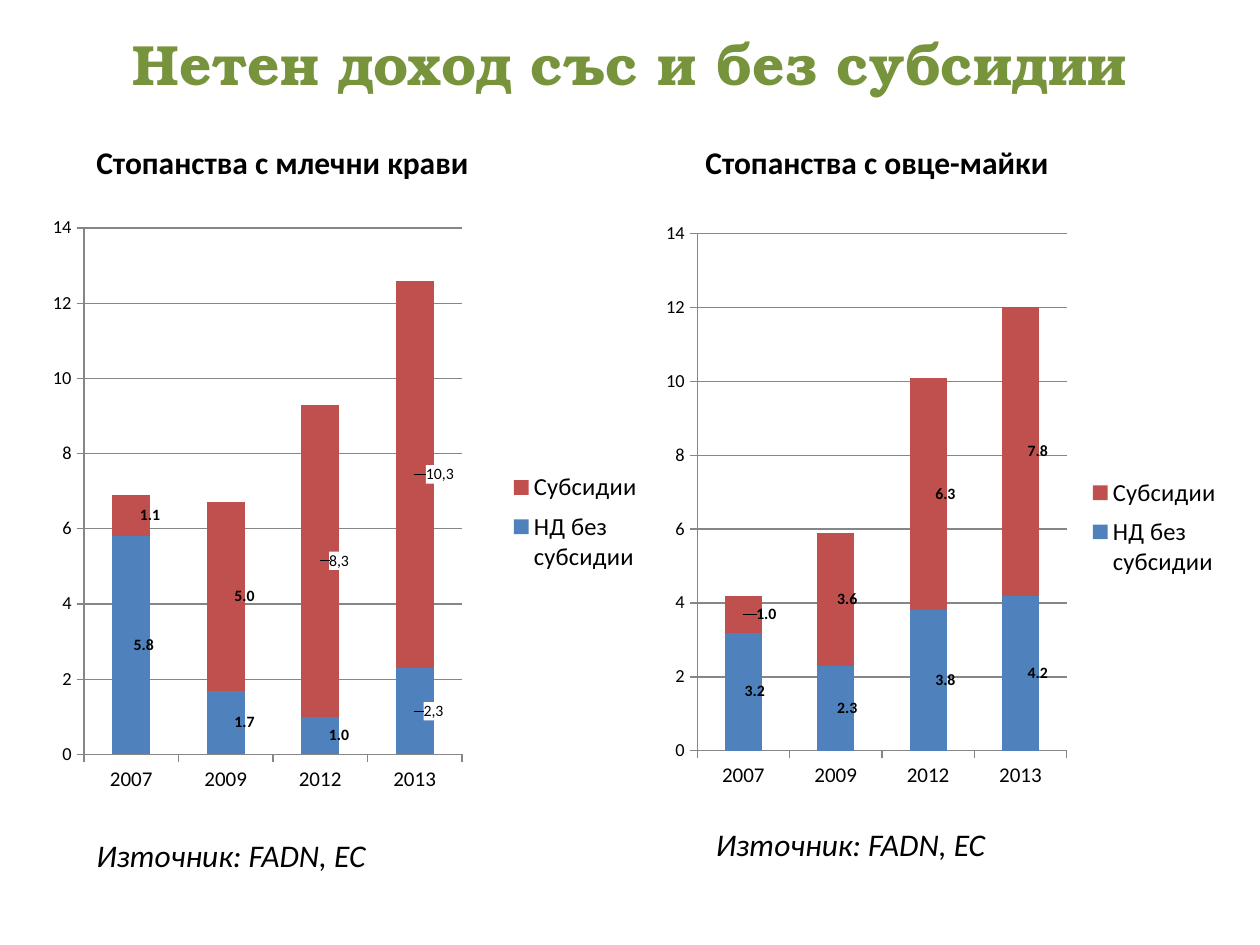
from dataclasses import dataclass

from lxml import etree
from pptx import Presentation
from pptx.chart.data import CategoryChartData
from pptx.dml.color import RGBColor
from pptx.enum.chart import XL_CHART_TYPE as ChartType
from pptx.enum.chart import XL_LEGEND_POSITION as LegendPosition
from pptx.enum.chart import XL_TICK_MARK as TickMark
from pptx.enum.text import MSO_ANCHOR as Anchor
from pptx.enum.text import PP_ALIGN as Align
from pptx.oxml import parse_xml
from pptx.oxml.ns import qn
from pptx.util import Pt

BLACK = RGBColor(0x00, 0x00, 0x00)
GREEN = RGBColor(0x77, 0x93, 0x3C)
BLUE = RGBColor(0x4F, 0x81, 0xBD)
RED = RGBColor(0xC0, 0x50, 0x4D)
GRAY = RGBColor(0x86, 0x86, 0x86)

BODY_FONT = "Calibri"
TITLE_FONT = "TeX Gyre Bonum"
YEARS = ("2007", "2009", "2012", "2013")
SOURCE = "Източник: FADN, EC"
NAMESPACES = (
    'xmlns:c="http://schemas.openxmlformats.org/drawingml/2006/chart" '
    'xmlns:a="http://schemas.openxmlformats.org/drawingml/2006/main"'
)
LABEL_FORMAT = f'<c:numFmt {NAMESPACES} formatCode="0.0" sourceLinked="0"/>'
LABEL_FILL = (
    f'<c:spPr {NAMESPACES}><a:solidFill><a:srgbClr val="FFFFFF"/></a:solidFill></c:spPr>'
)


@dataclass
class Box:
    left: float
    top: float
    width: float
    height: float

    def points(self) -> tuple:
        return Pt(self.left), Pt(self.top), Pt(self.width), Pt(self.height)


@dataclass
class Bars:
    name: str
    color: RGBColor
    values: tuple
    label_shifts: tuple  # sideways, as shares of the chart width
    label_texts: dict  # typed labels by point index


@dataclass
class IncomeChart:
    box: Box
    plot: Box  # shares of the chart
    legend: Box  # shares of the chart
    bars: tuple


@dataclass
class Caption:
    text: str
    box: Box
    bold: bool = False
    italic: bool = False


NET_INCOME = "НД без субсидии"
SUBSIDIES = "Субсидии"
CHARTS = (
    IncomeChart(
        Box(12, 102, 360, 354), Box(0.1, 0.08, 0.6, 0.85), Box(0.77, 0.46, 0.22, 0.19),
        (
            Bars(NET_INCOME, BLUE, (5.8, 1.7, 1.0, 2.3), (0.02, 0.03, 0.03, 0.03), {3: "2,3"}),
            Bars(SUBSIDIES, RED, (1.1, 5.0, 8.3, 10.3), (0.03, 0.03, 0.03, 0.04),
                 {2: "8,3", 3: "10,3"}),
        ),
    ),
    IncomeChart(
        Box(372, 120, 330, 336), Box(0.08, 0.04, 0.64, 0.88), Box(0.76, 0.44, 0.23, 0.2),
        (
            Bars(NET_INCOME, BLUE, (3.2, 2.3, 3.8, 4.2), (0.02, 0.02, 0.03, 0.03), {}),
            Bars(SUBSIDIES, RED, (1.0, 3.6, 6.3, 7.8), (0.04, 0.02, 0.03, 0.03), {}),
        ),
    ),
)
CAPTIONS = (
    Caption("Стопанства с млечни крави", Box(48, 78, 230, 29), bold=True),
    Caption("Стопанства с овце-майки", Box(396, 78, 258, 29), bold=True),
    Caption(SOURCE, Box(48, 474, 210, 29), italic=True),
    Caption(SOURCE, Box(402, 468, 234, 29), italic=True),
)


def style_font(font, size: float, bold: bool = False, italic: bool = False,
               color: RGBColor = BLACK, name: str = BODY_FONT) -> None:
    font.size = Pt(size)
    font.name = name
    font.bold = bold
    font.italic = italic
    font.color.rgb = color


def manual_layout(box: Box, inner: bool = False):
    target = '<c:layoutTarget val="inner"/>' if inner else ""
    return parse_xml(
        f'<c:layout {NAMESPACES}><c:manualLayout>{target}'
        f'<c:xMode val="edge"/><c:yMode val="edge"/>'
        f'<c:x val="{box.left}"/><c:y val="{box.top}"/>'
        f'<c:w val="{box.width}"/><c:h val="{box.height}"/>'
        f'</c:manualLayout></c:layout>'
    )


def replace_layout(parent, layout, position: int) -> None:
    for old_layout in parent.findall(qn("c:layout")):
        parent.remove(old_layout)
    parent.insert(position, layout)


def add_label(point, shift: float, text: str | None) -> None:
    """Label a bar on white, moved sideways from its centre."""
    label = point.data_label
    if text is None:
        style_font(label.font, 9, bold=True)
    else:
        run = label.text_frame.paragraphs[0].add_run()
        run.text = text
        style_font(run.font, 9)
    element = label._get_or_add_dLbl()
    layout = parse_xml(
        f'<c:layout {NAMESPACES}><c:manualLayout><c:x val="{shift}"/><c:y val="0"/>'
        f'</c:manualLayout></c:layout>'
    )
    replace_layout(element, layout, 1)
    position = 2 if text is None else 3
    element.insert(position, parse_xml(LABEL_FORMAT))
    element.insert(position + 1, parse_xml(LABEL_FILL))


def add_income_chart(slide, income: IncomeChart) -> None:
    data = CategoryChartData(number_format="0.0")
    data.categories = YEARS
    for bars in income.bars:
        data.add_series(bars.name, bars.values)
    chart = slide.shapes.add_chart(
        ChartType.COLUMN_STACKED, *income.box.points(), data
    ).chart
    chart.has_title = False
    style_font(chart.font, 10)

    plot = chart.plots[0]
    plot.gap_width, plot.overlap, plot.vary_by_categories = 150, 100, False
    for series, bars in zip(plot.series, income.bars):
        series.format.fill.solid()
        series.format.fill.fore_color.rgb = bars.color
        for index, shift in enumerate(bars.label_shifts):
            add_label(series.points[index], shift, bars.label_texts.get(index))

    value_axis = chart.value_axis
    value_axis.minimum_scale, value_axis.maximum_scale, value_axis.major_unit = 0, 14, 2
    value_axis.has_major_gridlines = True
    value_axis.tick_labels.number_format = "General"
    value_axis.tick_labels.number_format_is_linked = False
    for axis, size in ((chart.category_axis, 12), (value_axis, 10.5)):
        axis.major_tick_mark = TickMark.OUTSIDE
        axis.minor_tick_mark = TickMark.NONE
        style_font(axis.tick_labels.font, size)
    for line in (chart.category_axis.format.line, value_axis.format.line,
                 value_axis.major_gridlines.format.line):
        line.color.rgb = GRAY
        line.width = Pt(0.75)

    chart.has_legend = True
    chart.legend.position = LegendPosition.RIGHT
    chart.legend.include_in_layout = False
    style_font(chart.legend.font, 14)
    replace_layout(chart.legend._element, manual_layout(income.legend), 1)
    plot_area = chart._chartSpace.chart.plotArea
    replace_layout(plot_area, manual_layout(income.plot, inner=True), 0)


def add_caption(slide, caption: Caption) -> None:
    frame = slide.shapes.add_textbox(*caption.box.points()).text_frame
    frame.word_wrap = True
    run = frame.paragraphs[0].add_run()
    run.text = caption.text
    style_font(run.font, 18, caption.bold, caption.italic)


def add_title(slide, text: str) -> None:
    title = slide.shapes.title
    title.left, title.top, title.width, title.height = Box(36, 0, 648, 72).points()
    title.text_frame.vertical_anchor = Anchor.MIDDLE
    paragraph = title.text_frame.paragraphs[0]
    paragraph.alignment = Align.CENTER
    run = paragraph.add_run()
    run.text = text
    style_font(run.font, 32.4, bold=True, color=GREEN, name=TITLE_FONT)


def main() -> None:
    presentation = Presentation()
    presentation.slide_width, presentation.slide_height = Pt(720), Pt(540)
    slide = presentation.slides.add_slide(presentation.slide_layouts[5])
    add_title(slide, "Нетен доход със и без субсидии")
    for income in CHARTS:
        add_income_chart(slide, income)
    for caption in CAPTIONS:
        add_caption(slide, caption)
    presentation.save("out.pptx")


if __name__ == "__main__":
    main()
